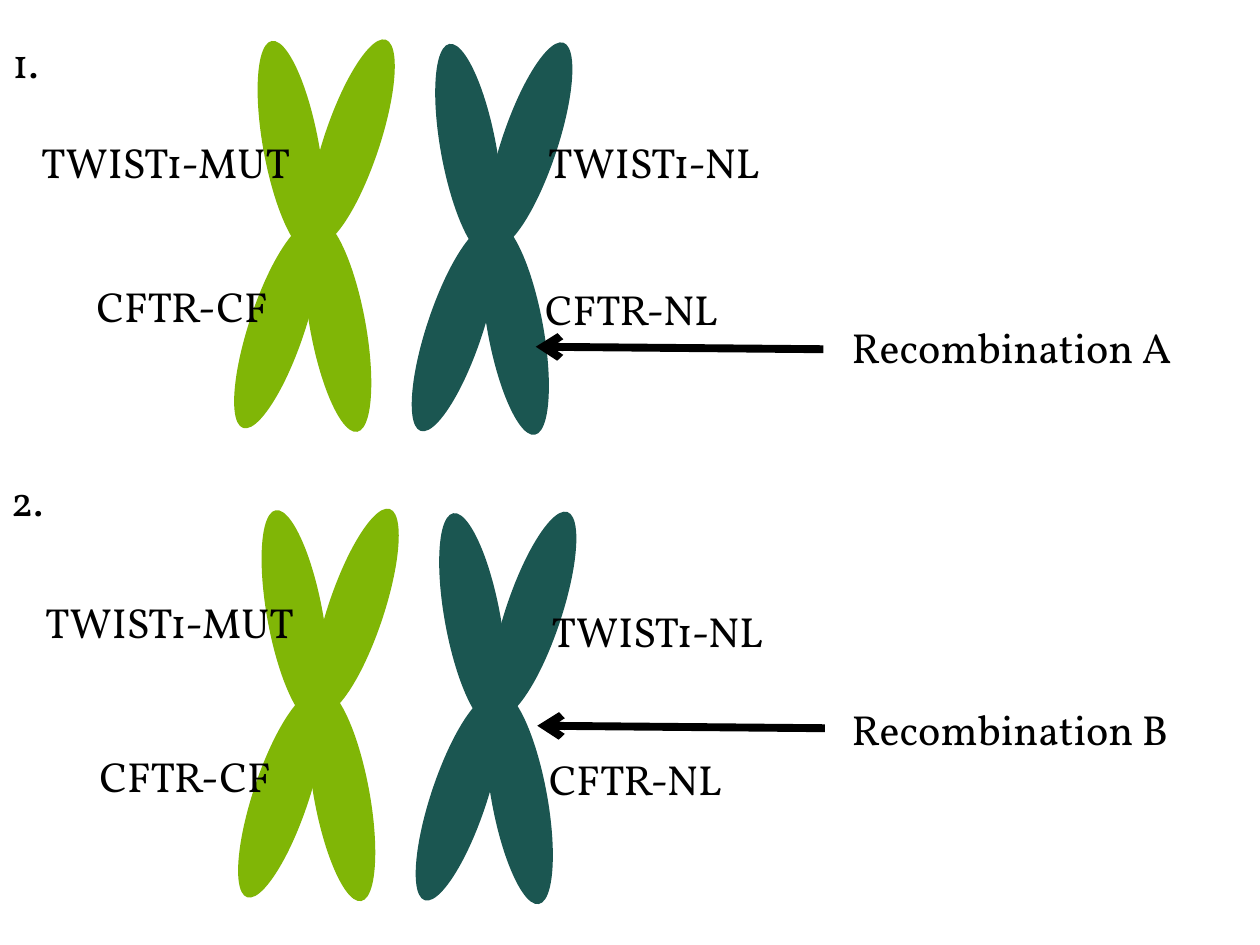
from dataclasses import dataclass

from lxml.etree import SubElement
from pptx import Presentation
from pptx.dml.color import RGBColor
from pptx.enum.shapes import MSO_CONNECTOR, MSO_SHAPE
from pptx.enum.text import MSO_AUTO_SIZE
from pptx.oxml.ns import qn
from pptx.slide import Slide
from pptx.util import Cm, Pt

GREEN = RGBColor(0x80, 0xB6, 0x06)
TEAL = RGBColor(0x1B, 0x56, 0x51)
BLACK = RGBColor(0, 0, 0)
FONT = "Vollkorn"

# All lengths are in centimetres
ARM_W, ARM_H = 1.12, 4.34
ROW_H = 1.27


@dataclass
class Arm:
    x: float
    y: float
    turn: float


@dataclass
class Label:
    text: str
    x: float
    y: float
    width: float


@dataclass
class Panel:
    x: float
    y: float
    labels: list[Label]
    tip: tuple[float, float]


# Arms of one chromosome, from its top left corner
ARMS = [
    Arm(1.5, 0, 18.5),
    Arm(1.22, 3.71, 349.6),
    Arm(0.28, 0.1, 349.6),
    Arm(0, 3.71, 18.5),
]

PANELS = [
    Panel(5.03, 0.69, [
        Label("CFTR-CF", 1.7, 5.54, 4.17),
        Label("TWIST1-MUT", 0.58, 2.62, 6.12),
        Label("CFTR-NL", 10.74, 5.59, 4.17),
        Label("TWIST1-NL", 10.8, 2.62, 6.43),
        Label("Recombination A", 16.92, 6.35, 8.05),
        Label("1.", 0, 0.61, 3.56),
    ], (10.8, 6.99)),
    Panel(5.11, 10.15, [
        Label("CFTR-CF", 1.76, 15.01, 4.17),
        Label("TWIST1-MUT", 0.66, 11.91, 6.12),
        Label("CFTR-NL", 10.82, 15.06, 4.17),
        Label("TWIST1-NL", 10.87, 12.09, 6.43),
        Label("Recombination B", 16.92, 14.05, 8.05),
        Label("2.", -0.03, 9.45, 3.56),
    ], (10.83, 14.63)),
]


def draw_pair(slide: Slide, x: float, y: float, color: RGBColor) -> None:
    """Draw one chromosome as a group of four arms."""
    group = slide.shapes.add_group_shape()
    for arm in ARMS:
        oval = group.shapes.add_shape(
            MSO_SHAPE.OVAL, Cm(x + arm.x), Cm(y + arm.y), Cm(ARM_W), Cm(ARM_H))
        oval.rotation = arm.turn
        oval.shadow.inherit = False
        oval.fill.solid()
        oval.fill.fore_color.rgb = color
        oval.line.fill.background()


def draw_label(slide: Slide, label: Label) -> None:
    box = slide.shapes.add_textbox(
        Cm(label.x), Cm(label.y), Cm(label.width), Cm(ROW_H))
    frame = box.text_frame
    frame.word_wrap = True
    frame.auto_size = MSO_AUTO_SIZE.SHAPE_TO_FIT_TEXT
    para = frame.paragraphs[0]
    para.text = label.text
    para.font.name = FONT
    para.font.size = Pt(24)
    para.font.color.rgb = BLACK


def draw_arrow(slide: Slide, x: float, y: float) -> None:
    """Draw an arrow that ends at the given point."""
    arrow = slide.shapes.add_connector(
        MSO_CONNECTOR.STRAIGHT, Cm(x + 5.8), Cm(y + 0.05), Cm(x), Cm(y))
    arrow.line.color.rgb = BLACK
    arrow.line.width = Pt(4.5)
    SubElement(arrow.line._get_or_add_ln(), qn("a:tailEnd"), type="arrow")
    SubElement(arrow._element.spPr, qn("a:effectLst"))


def main() -> None:
    deck = Presentation()
    deck.slide_width, deck.slide_height = Cm(25.4), Cm(19.05)
    slide = deck.slides.add_slide(deck.slide_layouts[6])

    for panel in PANELS:
        # Chromosome pair
        draw_pair(slide, panel.x, panel.y, GREEN)
        draw_pair(slide, panel.x + 3.58, panel.y + 0.06, TEAL)
        # Gene names and crossover point
        for label in panel.labels:
            draw_label(slide, label)
        draw_arrow(slide, *panel.tip)

    deck.save("out.pptx")


if __name__ == "__main__":
    main()
